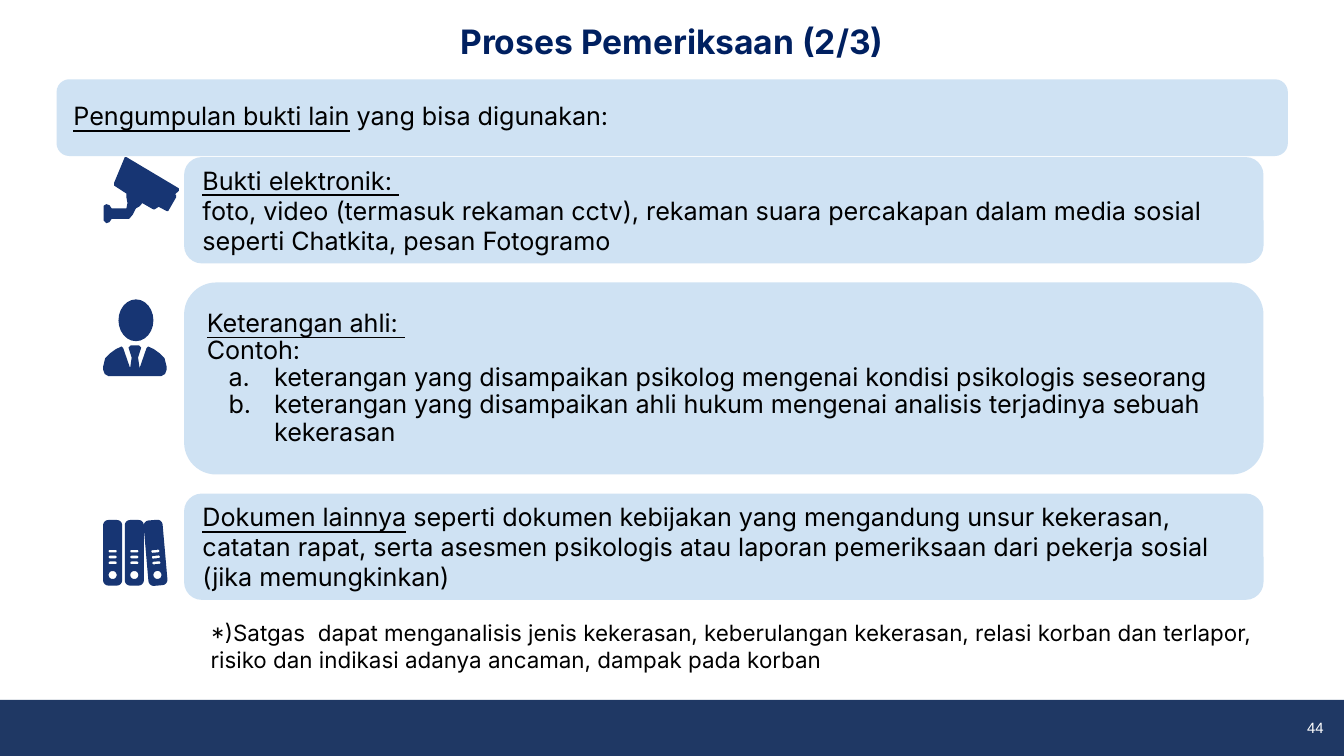
from dataclasses import dataclass
from itertools import product
from math import cos, pi, radians, sin

from lxml import etree
from pptx import Presentation
from pptx import util as u
from pptx.dml.color import RGBColor
from pptx.enum import shapes as es, text as et
from pptx.oxml import ns

Cm = u.Cm
KIND = es.MSO_SHAPE
LEFT, MID, RIGHT = et.PP_ALIGN.LEFT, et.PP_ALIGN.CENTER, et.PP_ALIGN.RIGHT
TOP, HALF = et.MSO_ANCHOR.TOP, et.MSO_ANCHOR.MIDDLE


@dataclass(frozen=True)
class Theme:
    font: str = "Inter"
    plain: str = "Arial"
    card: str = "CFE2F3"
    icon: str = "173573"
    bar: str = "1F3864"
    title: str = "002060"
    ink: str = "000000"
    white: str = "FFFFFF"
    head: float = 18
    body: float = 13.5
    note: float = 12
    page: float = 8


T = Theme()

ELEC = [
    [("Bukti elektronik: ", True)],
    [("foto, video (termasuk rekaman cctv), rekaman suara percakapan dalam "
      "media sosial seperti Chatkita, pesan Fotogramo", False)],
]
DOCS = [[
    ("Dokumen lainnya", True),
    (" seperti dokumen kebijakan yang mengandung unsur kekerasan, catatan "
     "rapat, serta asesmen psikologis atau laporan pemeriksaan dari pekerja "
     "sosial (jika memungkinkan)", False),
]]
LEAD = [[("Pengumpulan bukti lain", True), (" yang bisa digunakan:", False)]]
INTRO = [[("Keterangan ahli: ", True)], [("Contoh:", False)]]
ITEMS = [
    [("keterangan yang disampaikan psikolog mengenai kondisi psikologis "
      "seseorang", False)],
    [("keterangan yang disampaikan ahli hukum mengenai analisis terjadinya "
      "sebuah kekerasan", False)],
]
NOTE = [[("*)Satgas  dapat menganalisis jenis kekerasan, keberulangan "
          "kekerasan, relasi korban dan terlapor, risiko dan indikasi adanya "
          "ancaman, dampak pada korban", False)]]

CAMERA = [
    (3.38, 3.56), (2.39, 2.97), (2.36, 2.97), (2.16, 3.45), (2.16, 3.51),
    (2.39, 3.66), (2.39, 3.73), (2.41, 3.84), (2.39, 3.94), (2.11, 3.94),
    (2.07, 3.88), (2.01, 3.86), (1.96, 3.89), (1.96, 4.17), (2.01, 4.22),
    (2.07, 4.2), (2.11, 4.14), (2.44, 4.14), (2.51, 4.06), (2.57, 3.94),
    (2.64, 3.9), (2.69, 3.84), (2.9, 3.96), (2.92, 3.96), (3, 3.91),
    (3.15, 3.99), (3.18, 3.99), (3.33, 3.73), (3.33, 3.68), (3.3, 3.68),
    (3.38, 3.61),
]
COAT = [
    (0.08, 6.53), (0.12, 6.57), (0.06, 6.76), (0.09, 6.96), (0.22, 6.58),
    (0.25, 6.55), (0.36, 6.6), (0.47, 6.68), (0.56, 6.77), (0.6, 6.93),
    (0.6, 6.99), (0.57, 7.07), (0.5, 7.11),
]


def assign(obj, vals):
    for name, val in vals.items():
        setattr(obj, name, val)


def place(obj, box):
    assign(obj, dict(zip(("left", "top", "width", "height"), map(Cm, box))))


def paint(shape, tint):
    shape.shadow.inherit = False
    shape.fill.solid()
    shape.fill.fore_color.rgb = RGBColor.from_string(tint)
    shape.line.fill.background()


def bullet(para, kind, left=0, hang=0):
    props = para._p.get_or_add_pPr()
    props.set("marL", str(Cm(left)))
    props.set("indent", str(Cm(hang)))
    mark = etree.SubElement(props, ns.qn("a:" + kind))
    if kind == "buAutoNum":
        mark.set("type", "alphaLcPeriod")


def frame(shape, anchor=HALF, side=0.25, edge=0.13):
    assign(shape.text_frame, {
        "word_wrap": True, "auto_size": et.MSO_AUTO_SIZE.NONE,
        "vertical_anchor": anchor,
        "margin_left": Cm(side), "margin_right": Cm(side),
        "margin_top": Cm(edge), "margin_bottom": Cm(edge)})
    return shape.text_frame


def write(area, paras, size=T.body, tint=T.ink, font=T.font, align=LEFT,
          space=1.0, bold=False):
    for num, runs in enumerate(paras):
        para = area.add_paragraph() if num else area.paragraphs[0]
        assign(para, {"alignment": align, "line_spacing": space,
                      "space_before": u.Pt(0)})
        for words, under in runs:
            run = para.add_run()
            run.text = words
            assign(run.font, {"name": font, "size": u.Pt(size),
                              "bold": bold, "underline": under})
            run.font.color.rgb = RGBColor.from_string(tint)


def block(slide, box, tint, kind=KIND.ROUNDED_RECTANGLE):
    shape = slide.shapes.add_shape(kind, *map(Cm, box))
    paint(shape, tint)
    return shape


def label(slide, box, paras, anchor=TOP, edge=0.25, **look):
    text = slide.shapes.add_textbox(*map(Cm, box))
    write(frame(text, anchor, edge=edge), paras, **look)


def outline(slide, rings):
    pen = None
    for ring in rings:
        dots = [(Cm(x), Cm(y)) for x, y in ring]
        if pen:
            pen.move_to(*dots[0])
        else:
            pen = slide.shapes.build_freeform(*dots[0])
        pen.add_line_segments(dots[1:], close=True)
    paint(pen.convert_to_shape(), T.icon)


def rounded(mid, wide, high, arc):
    signs = [(1, 1), (-1, 1), (-1, -1), (1, -1)]
    return [(sx * (wide / 2 - arc) + arc * cos((turn + step / 6) * pi / 2),
             mid + sy * (high / 2 - arc) + arc * sin((turn + step / 6) * pi / 2))
            for (turn, (sx, sy)), step in product(enumerate(signs), range(7))]


def binder(slide, left, tilt=0):
    rings = [rounded(0, 0.36, 1.24, 0.1), rounded(0.42, 0.15, 0.15, 0.07)]
    rings += [rounded(mid, 0.15, 0.05, 0.02) for mid in (-0.03, 0.08, 0.19)]
    co, si = cos(radians(tilt)), sin(radians(tilt))
    outline(slide, [[(left + x * co + y * si, 10.45 - x * si + y * co)
                     for x, y in ring] for ring in rings])


def person(slide):
    mid = 2.55
    block(slide, (2.24, 5.66, 0.66, 0.79), T.icon, KIND.OVAL)
    outline(slide, [[(mid + x, y) for x, y in COAT]
                    + [(mid - x, y) for x, y in reversed(COAT)]])


def expert(slide, body, top):
    place(body, (3.66, top, 20.04, 3.63))
    body.element.getparent().append(body.element)
    area = frame(body)
    write(area, INTRO + ITEMS, space=0.9)
    for num, para in enumerate(area.paragraphs):
        if num < len(INTRO):
            bullet(para, "buNone")
        else:
            bullet(para, "buAutoNum", 1.27, -0.86)


def main():
    deck = Presentation()
    assign(deck, {"slide_width": Cm(25.4), "slide_height": Cm(14.29)})
    slide = deck.slides.add_slide(deck.slide_layouts[1])
    title, body = slide.placeholders

    block(slide, (0, 13.23, 25.4, 1.06), T.bar, KIND.RECTANGLE)
    label(slide, (23.62, 13.49, 1.65, 0.51), [[("44", False)]], HALF, 0.1,
          size=T.page, tint=T.white, font=T.plain, align=RIGHT)
    place(title, (0, 0.15, 25.4, 1.27))
    write(frame(title, TOP, edge=0.25), [[("Proses Pemeriksaan (2/3)", False)]],
          size=T.head, tint=T.title, align=MID, bold=True)

    top = 2.97
    for high, paras in ((2.01, ELEC), (3.63, None), (2.01, DOCS)):
        card = block(slide, (3.48, top, 20.4, high), T.card)
        if paras:
            write(frame(card), paras)
        else:
            expert(slide, body, top)
        top += high + 0.36
    lead = block(slide, (1.07, 1.5, 23.27, 1.45), T.card)
    write(frame(lead), LEAD, space=0.9)

    person(slide)
    for left, tilt in ((2.13, 0), (2.54, 0), (2.94, 5)):
        binder(slide, left, tilt)
    outline(slide, [CAMERA])
    label(slide, (3.73, 11.46, 20.27, 1.55), NOTE, size=T.note)
    deck.save("out.pptx")


if __name__ == "__main__":
    main()
